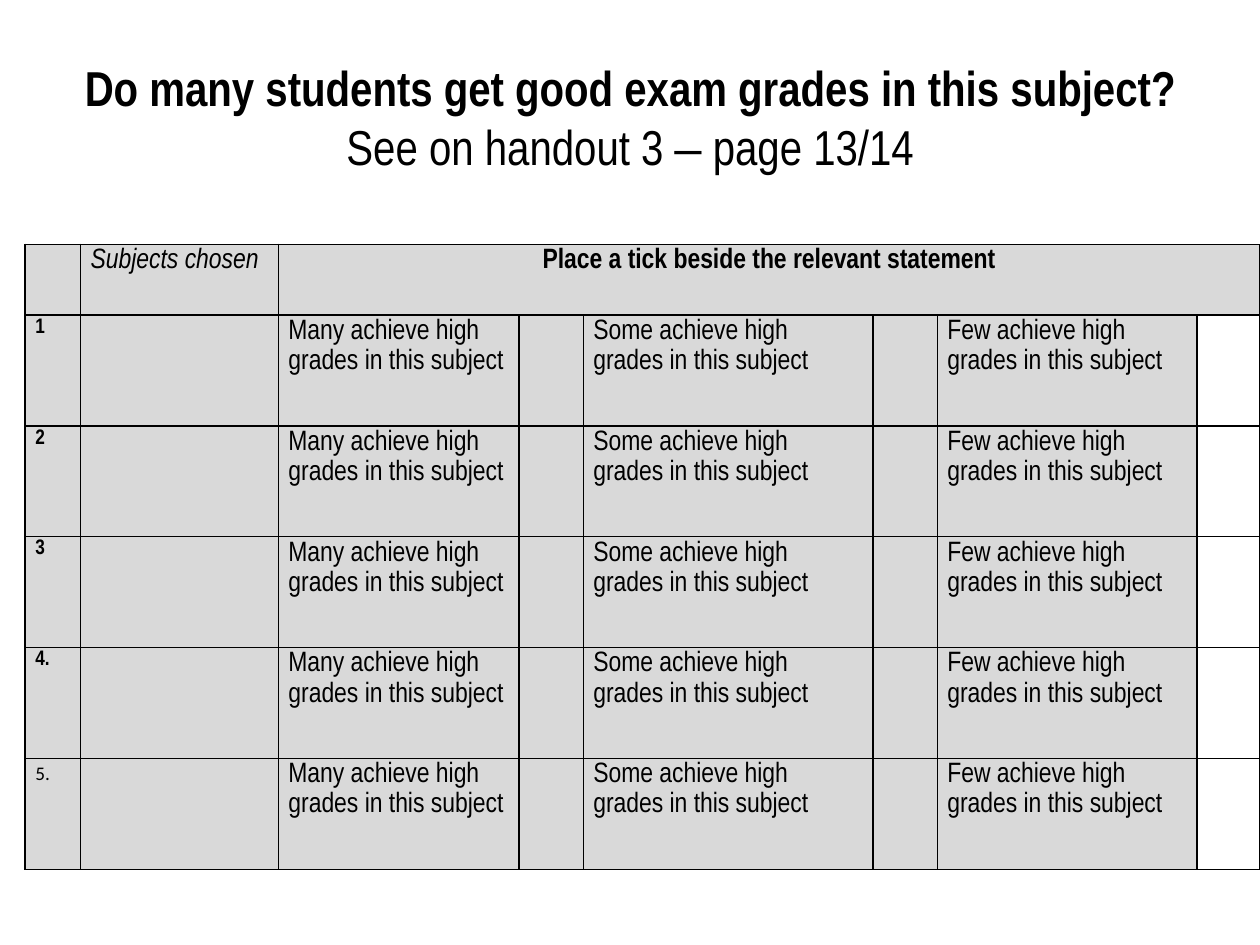
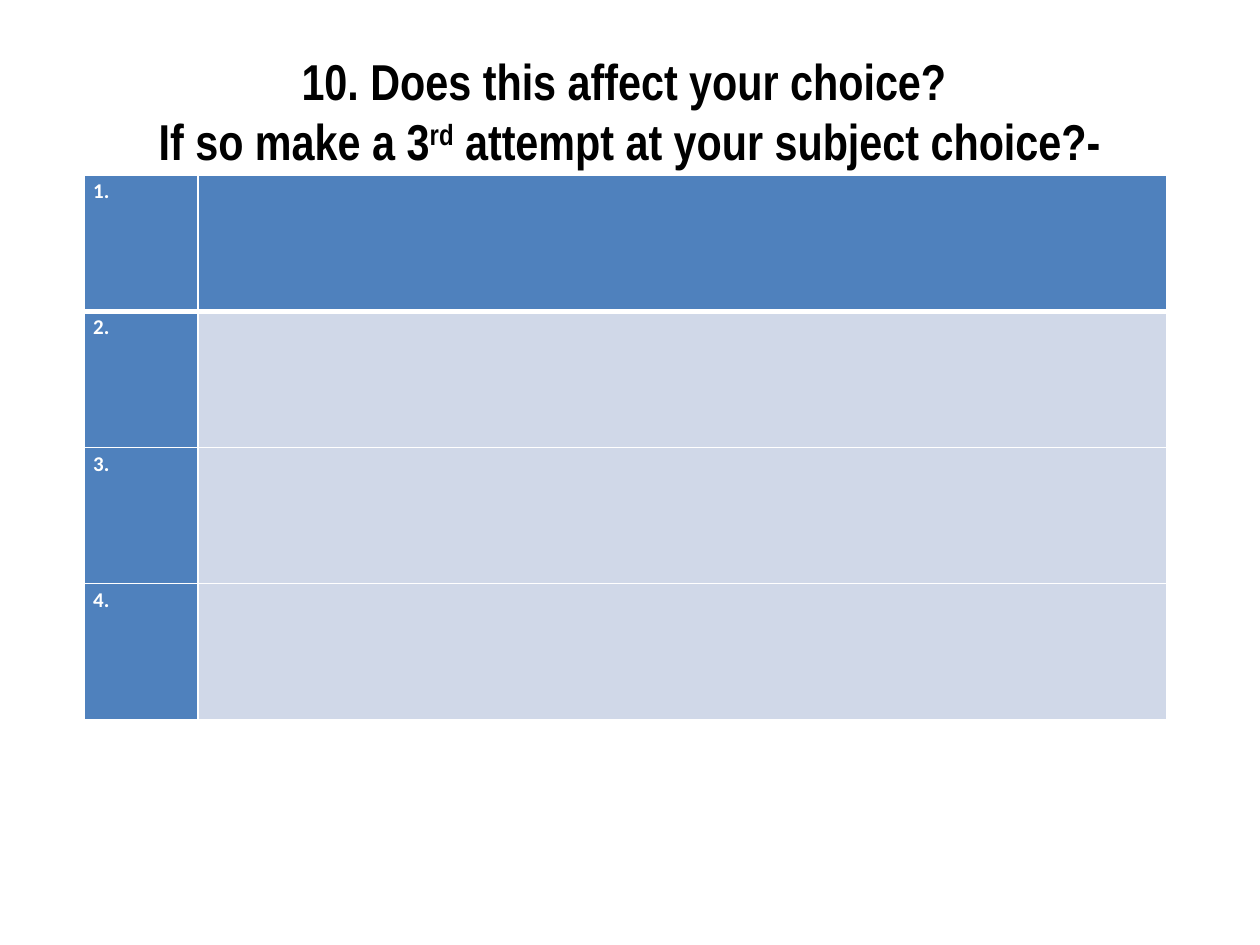
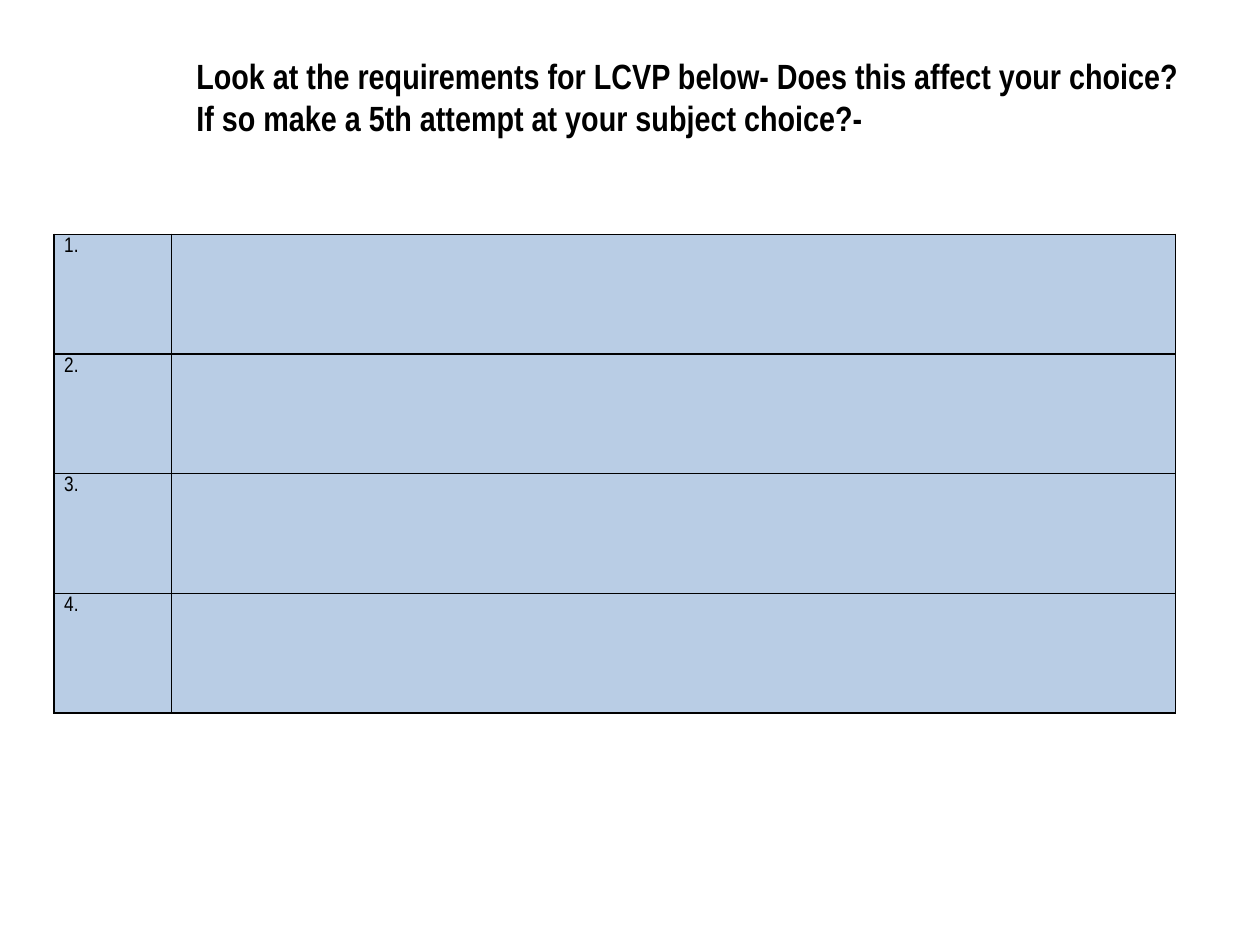
import pptx
import pptx.dml.color
import pptx.enum.text
import pptx.oxml
import pptx.oxml.ns
import pptx.util
from lxml import etree

Inches = pptx.util.Inches
Pt = pptx.util.Pt
ALIGN = pptx.enum.text.PP_ALIGN
ANCHOR = pptx.enum.text.MSO_ANCHOR
NO_FIT = pptx.enum.text.MSO_AUTO_SIZE.NONE

BLACK, WHITE = "000000", "FFFFFF"
GREY, BLUE, PALE_BLUE, SKY = "D9D9D9", "4F81BD", "D0D8E8", "B9CDE5"
NARROW = "Arial Narrow"


def colour(code):
    return pptx.dml.color.RGBColor.from_string(code)


def assign(target, values):
    for name, value in values.items():
        setattr(target, name, value)


class Deck:
    TITLE_ONLY, BLANK = 5, 6
    heading = {"name": NARROW, "size": Pt(28), "bold": True}
    entry = {"name": NARROW, "size": Pt(12), "bold": False}

    def __init__(self):
        self.show = pptx.Presentation()
        assign(self.show, {"slide_width": Inches(10), "slide_height": Inches(7.5)})
        self.slide = None

    def new_slide(self, layout):
        self.slide = self.show.slides.add_slide(self.show.slide_layouts[layout])

    def add_runs(self, paragraph, pieces, style, code=BLACK):
        for text, changes in pieces:
            for number, line in enumerate(text.split("\n")):
                if number:
                    paragraph.add_line_break()
                if not line:
                    continue
                run = paragraph.add_run()
                run.text = line
                run.font.color.rgb = colour(code)
                values = {**style, **changes}
                raised = values.pop("raised", None)
                assign(run.font, values)
                if raised:
                    run._r.get_or_add_rPr().set("baseline", str(raised * 1000))

    def place(self, shape, box):
        assign(shape, dict(zip(("left", "top", "width", "height"), map(Inches, box))))

    def title(self, box, pieces, **changes):
        heading = self.slide.shapes.title
        self.place(heading, box)
        assign(heading.text_frame, {"auto_size": NO_FIT, "word_wrap": True,
                                    "vertical_anchor": ANCHOR.MIDDLE})
        paragraph = heading.text_frame.paragraphs[0]
        paragraph.alignment = ALIGN.CENTER
        self.add_runs(paragraph, pieces, {**self.heading, **changes})

    def text(self, box, pieces, **changes):
        frame = self.slide.shapes.add_textbox(*map(Inches, box)).text_frame
        assign(frame, {"word_wrap": True, "auto_size": NO_FIT,
                       "vertical_anchor": ANCHOR.TOP, "margin_top": Inches(0.07)})
        self.add_runs(frame.paragraphs[0], pieces, {**self.heading, **changes})

    def table(self, left, top, widths, heights):
        grid = self.slide.shapes.add_table(
            len(heights), len(widths), Inches(left), Inches(top),
            Inches(sum(widths)), Inches(sum(heights))).table
        assign(grid, {"first_row": False, "horz_banding": False})
        for column, width in zip(grid.columns, widths):
            column.width = Inches(width)
        for row, height in zip(grid.rows, heights):
            row.height = Inches(height)
        return grid

    def border(self, cell, code, **widths):
        properties = cell._tc.get_or_add_tcPr()
        for side in "LRTB":
            line = etree.SubElement(properties, pptx.oxml.ns.qn(f"a:ln{side}"),
                                    w=str(Pt(widths.get(side, 1))))
            solid = etree.SubElement(line, pptx.oxml.ns.qn("a:solidFill"))
            etree.SubElement(solid, pptx.oxml.ns.qn("a:srgbClr"), val=code)

    def cell(self, cell, fill, edge=BLACK, text="", code=BLACK, inset=0.08,
             align=ALIGN.LEFT, edges=None, **changes):
        self.border(cell, edge, **(edges or {}))
        if fill:
            cell.fill.solid()
            cell.fill.fore_color.rgb = colour(fill)
        else:
            cell.fill.background()
        assign(cell, {"margin_left": Inches(inset), "margin_right": Inches(inset),
                      "margin_top": 0, "margin_bottom": 0})
        paragraph = cell.text_frame.paragraphs[0]
        assign(paragraph, {"alignment": align, "line_spacing": 1.15})
        self.add_runs(paragraph, [(text, {})], {**self.entry, **changes}, code)


def grades_slide(deck):
    deck.new_slide(deck.TITLE_ONLY)
    deck.title((0.5, 0.3, 9, 1.25), [
        ("Do many students get good exam grades in this subject?\n", {}),
        ("See on handout 3 ", {"bold": False}),
        ("–", {"bold": False, "name": "Arial"}),
        (" page 13/14", {"bold": False})])
    grades = deck.table(0.2, 1.94, [0.44, 1.57, 1.91, 0.51, 2.3, 0.51, 2.06, 0.5],
                        [0.56] + [0.88] * 5)
    headings = {1: ("Subjects chosen", {"italic": True}),
                2: ("Place a tick beside the relevant statement",
                    {"bold": True, "align": ALIGN.CENTER})}
    for column in range(8):
        text, changes = headings.get(column, ("", {}))
        deck.cell(grades.cell(0, column), GREY, text=text, size=Pt(16), **changes)
    grades.cell(0, 2).merge(grades.cell(0, 7))
    statements = {column: f"{amount} achieve high grades in this subject"
                  for column, amount in ((2, "Many"), (4, "Some"), (6, "Few"))}
    for row, number in enumerate(("1", "2", "3", "4.", "5."), 1):
        number_style = {"name": "Calibri", "size": Pt(11)} if row == 5 else {"bold": True}
        deck.cell(grades.cell(row, 0), GREY, text=number, **number_style)
        for column in range(1, 8):
            deck.cell(grades.cell(row, column), None if column == 7 else GREY,
                      text=statements.get(column, ""), size=Pt(16))


def third_attempt_slide(deck):
    deck.new_slide(deck.TITLE_ONLY)
    deck.title((0.5, 0.3, 9, 1.15), [
        ("10. Does this affect your choice? \nIf so make a 3", {}),
        ("rd", {"raised": 30}),
        (" attempt at your subject choice?-", {})], size=Pt(28.8))
    choices = deck.table(0.67, 1.39, [0.9, 7.69], [1.08] * 4)
    for row in range(4):
        edges = {0: {"B": 3}, 1: {"T": 3}}.get(row)
        deck.cell(choices.cell(row, 0), BLUE, WHITE, f"{row + 1}.", WHITE, 0.07,
                  edges=edges, name="Calibri", bold=True)
        deck.cell(choices.cell(row, 1), PALE_BLUE if row else BLUE, WHITE, edges=edges)


def fifth_attempt_slide(deck):
    deck.new_slide(deck.BLANK)
    choices = deck.table(0.43, 1.86, [0.93, 7.97], [0.95] * 4)
    for row in range(4):
        deck.cell(choices.cell(row, 0), SKY, text=f"{row + 1}.")
        deck.cell(choices.cell(row, 1), SKY)
    deck.text((1.46, 0.36, 8.11, 1.08), [
        ("Look at the requirements for LCVP below- Does this affect your choice? \n"
         "If so make a 5th attempt at your subject choice?-", {})], size=Pt(20))


def main():
    deck = Deck()
    grades_slide(deck)
    third_attempt_slide(deck)
    fifth_attempt_slide(deck)
    deck.show.save("out.pptx")


if __name__ == "__main__":
    main()
